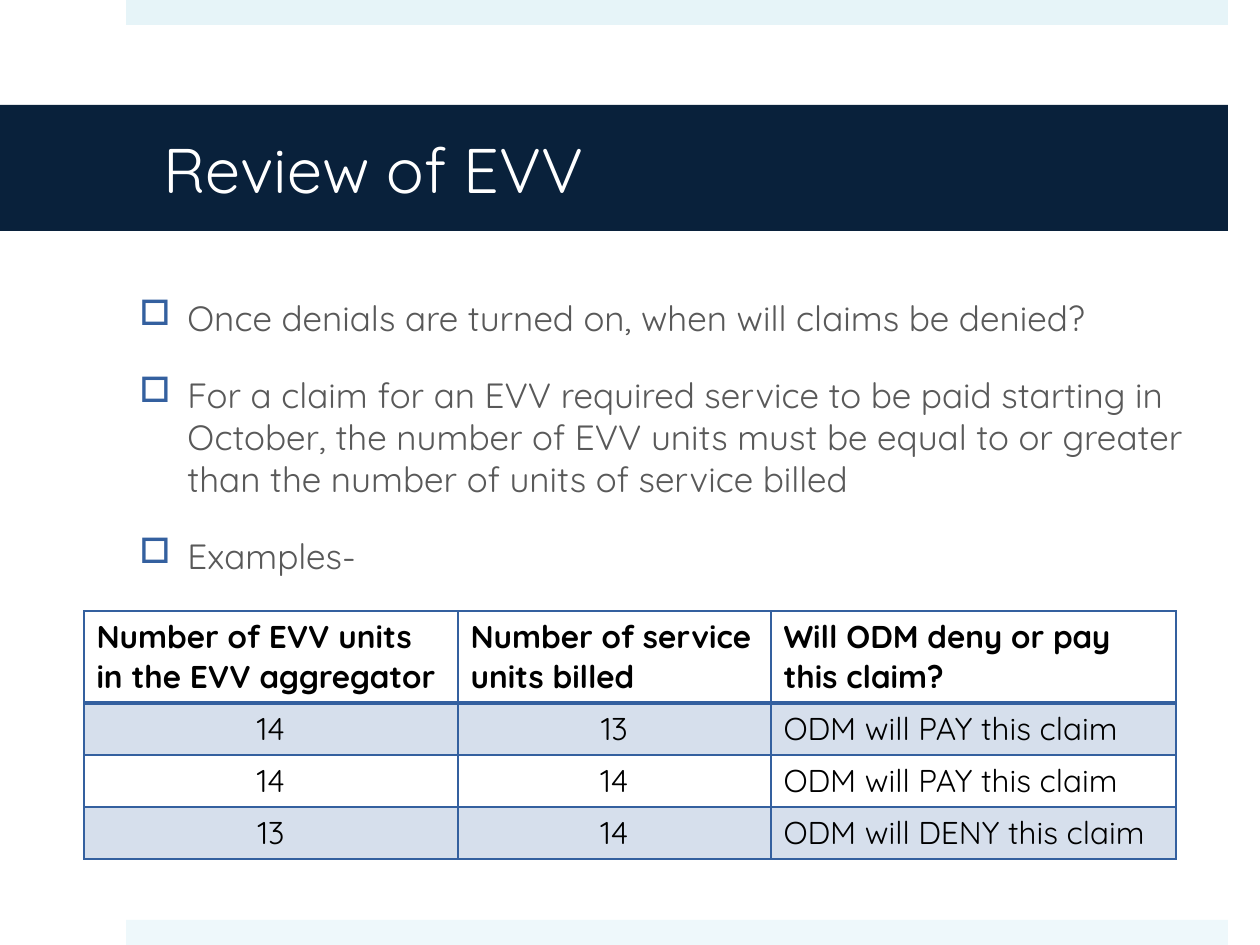
"""Build the EVV review slide with its claim examples table."""
import pptx
import pptx.dml.color
import pptx.enum.shapes
import pptx.enum.text
import pptx.oxml
import pptx.oxml.ns
import pptx.util

PX = 914400 / 126
NAVY, BLUE, GREY, STRIPE = "09213B", "34609F", "595959", "D6DFEC"
NAMESPACE = pptx.oxml.ns.nsdecls("a")
ALIGN = pptx.enum.text.PP_ALIGN


def emu(*lengths):
    return [pptx.util.Emu(round(length * PX)) for length in lengths]


def write(paragraph, text, size=20, color=GREY, bold=False, align=ALIGN.LEFT):
    paragraph.alignment = align
    run = paragraph.add_run()
    run.text = text
    run.font.name = "Quicksand"
    run.font.size = pptx.util.Pt(size)
    run.font.bold = bold
    run.font.color.rgb = pptx.dml.color.RGBColor.from_string(color)


deck = pptx.Presentation()
deck.slide_width, deck.slide_height = emu(1260, 945)
slide = deck.slides.add_slide(deck.slide_layouts[6])

bands = []
for box, color in [
    ((126, 0, 1102, 25), "E6F4F8"),
    ((126, 920, 1102, 25), "EEF8FB"),
    ((0, 105, 1228, 126), NAVY),
]:
    band = slide.shapes.add_shape(pptx.enum.shapes.MSO_SHAPE.RECTANGLE, *emu(*box))
    band.shadow.inherit = False
    band.fill.solid()
    band.fill.fore_color.rgb = pptx.dml.color.RGBColor.from_string(color)
    band.line.fill.background()
    bands.append(band)

heading = bands[-1].text_frame
heading.margin_left, heading.margin_right = emu(164, 38)
heading.vertical_anchor = pptx.enum.text.MSO_ANCHOR.MIDDLE
write(heading.paragraphs[0], "Review of EVV", size=36, color="FFFFFF")

points = slide.shapes.add_textbox(*emu(127, 290, 1101, 505)).text_frame
points.word_wrap = True
hanging = emu(48)[0]
for index, point in enumerate([
    "Once denials are turned on, when will claims be denied?",
    "For a claim for an EVV required service to be paid starting in October, "
    "the number of EVV units must be equal to or greater than the number of "
    "units of service billed",
    "Examples-",
]):
    paragraph = points.add_paragraph() if index else points.paragraphs[0]
    paragraph.space_before = pptx.util.Pt(20)
    write(paragraph, point)
    properties = paragraph._p.get_or_add_pPr()
    properties.set("marL", str(hanging))
    properties.set("indent", str(-hanging))
    for bullet in (
        f'<a:buClr {NAMESPACE}><a:srgbClr val="{BLUE}"/></a:buClr>',
        f'<a:buChar {NAMESPACE} char="□"/>',
    ):
        properties.append(pptx.oxml.parse_xml(bullet))

claims = [
    ["Number of EVV units in the EVV aggregator", "Number of service units billed",
     "Will ODM deny or pay this claim?"],
    ["14", "13", "ODM will PAY this claim"],
    ["14", "14", "ODM will PAY this claim"],
    ["13", "14", "ODM will DENY this claim"],
]
examples = slide.shapes.add_table(4, 3, *emu(84, 611, 1092, 248)).table
for column, width in zip(examples.columns, emu(374, 313, 405)):
    column.width = width
for row, height in zip(examples.rows, emu(92, 52, 52, 52)):
    row.height = height

for r, claim in enumerate(claims):
    for c, text in enumerate(claim):
        cell = examples.cell(r, c)
        centred = r > 0 and c < 2
        write(cell.text_frame.paragraphs[0], text, size=18, color="000000", bold=r == 0,
              align=ALIGN.CENTER if centred else ALIGN.LEFT)
        borders = cell._tc.get_or_add_tcPr()
        for side in "LRTB":
            heavy = (r, side) in [(0, "B"), (1, "T")]
            borders.append(pptx.oxml.parse_xml(
                f'<a:ln{side} {NAMESPACE} w="{25400 if heavy else 12700}"><a:solidFill>'
                f'<a:srgbClr val="{BLUE}"/></a:solidFill></a:ln{side}>'))
        if r % 2:
            cell.fill.solid()
            cell.fill.fore_color.rgb = pptx.dml.color.RGBColor.from_string(STRIPE)
        else:
            cell.fill.background()

deck.save("out.pptx")
